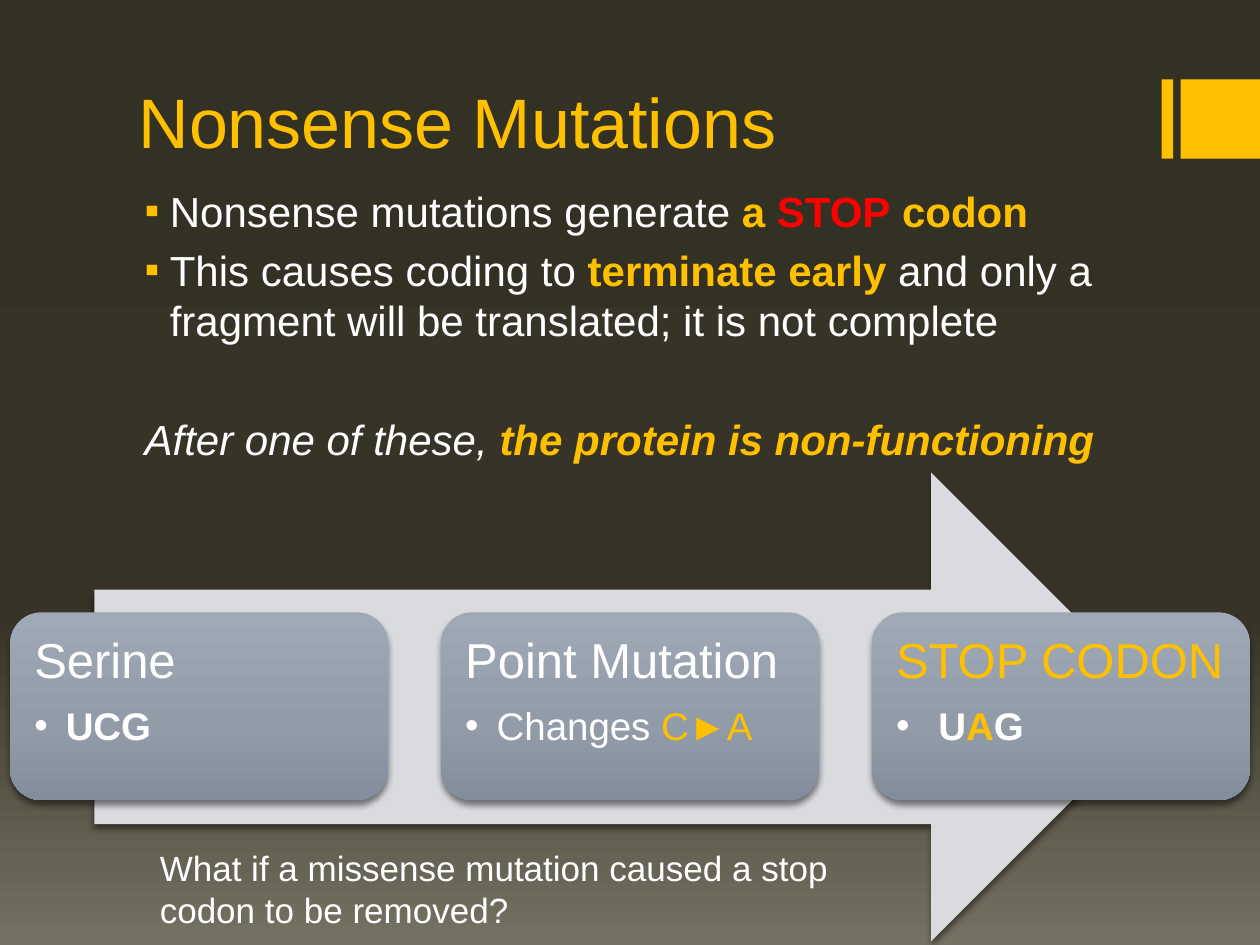
from lxml.etree import SubElement
from pptx import Presentation
from pptx.dml.color import RGBColor
from pptx.enum.shapes import MSO_SHAPE
from pptx.enum.text import MSO_ANCHOR, MSO_AUTO_SIZE, PP_ALIGN
from pptx.oxml.ns import qn
from pptx.util import Inches, Pt

C = {"gold": "FFC000", "white": "FFFFFF", "red": "FF0000", "arrow": "D9DBDE", "shadow": "000000"}
BACKGROUND = [(0, "333024"), (65, "373427"), (100, "767263")]
CARD = [(0, "9FA9B6"), (60, "929BA8"), (100, "838D9B")]


def write(p, parts, size, indent=0, hang=0, bullet=None, bullet_color="white"):
    p.alignment = PP_ALIGN.LEFT
    pPr = p._p.get_or_add_pPr()
    pPr.set("marL", str(Inches(indent)))
    pPr.set("indent", str(-Inches(hang)))
    if bullet:
        clr = SubElement(pPr, qn("a:buClr"))
        SubElement(clr, qn("a:srgbClr"), val=C[bullet_color])
        SubElement(pPr, qn("a:buFont"), typeface="Arial")
        SubElement(pPr, qn("a:buChar"), char=bullet)
    else:
        SubElement(pPr, qn("a:buNone"))
    p.text = ""
    for text, color, bold in parts:
        r = p.add_run()
        r.text = text
        r.font.name = "Arial"
        r.font.size = Pt(size)
        r.font.bold = bold
        r.font.color.rgb = RGBColor.from_string(C[color])


def shade(fill, element, stops):
    fill.gradient()
    fill.gradient_angle = 270
    gs_list = next(element.iter(qn("a:gsLst")))
    for gs in list(gs_list):
        gs_list.remove(gs)
    for pos, color in stops:
        gs = SubElement(gs_list, qn("a:gs"), pos=str(pos * 1000))
        SubElement(gs, qn("a:srgbClr"), val=color)


prs = Presentation()
prs.slide_width, prs.slide_height = Inches(10), Inches(7.5)
s = prs.slides.add_slide(prs.slide_layouts[5])
shade(s.background.fill, s._element, BACKGROUND)

for left, width in [(9.22, 0.09), (9.37, 0.63)]:
    sp = s.shapes.add_shape(MSO_SHAPE.RECTANGLE, Inches(left), Inches(0.63), Inches(width), Inches(0.63))
    sp.shadow.inherit = False
    sp.fill.solid()
    sp.fill.fore_color.rgb = RGBColor.from_string(C["gold"])
    sp.line.fill.background()

title = s.shapes.title
title.left, title.top, title.width, title.height = Inches(1), Inches(0.08), Inches(8), Inches(1.26)
title.text_frame.vertical_anchor = MSO_ANCHOR.BOTTOM
write(title.text_frame.paragraphs[0], [("Nonsense Mutations", "gold", False)], 40)

tf = s.shapes.add_textbox(Inches(1), Inches(1.42), Inches(8), Inches(3.87)).text_frame
tf.word_wrap = True
points = [
    [("Nonsense mutations generate ", "white", False), ("a ", "gold", True),
     ("STOP", "red", True), (" codon", "gold", True)],
    [("This causes coding to ", "white", False), ("terminate early ", "gold", True),
     ("and only a fragment will be translated; it is not complete", "white", False)],
]
for i, parts in enumerate(points):
    p = tf.add_paragraph() if i else tf.paragraphs[0]
    write(p, parts, 24, 0.25, 0.2, "▪", "gold")
    p.space_before = Pt(5 * i)
p = tf.add_paragraph()
write(p, [("After one of these, ", "white", False), ("the protein is non-functioning", "gold", True)], 24, 0.05)
p.space_before = Pt(39)
for r in p.runs:
    r.font.italic = True

arrow = s.shapes.add_shape(MSO_SHAPE.RIGHT_ARROW, Inches(0.75), Inches(3.75), Inches(8.5), Inches(3.72))
arrow.fill.solid()
arrow.fill.fore_color.rgb = RGBColor.from_string(C["arrow"])
process = [arrow]

cards = [
    ("Serine", "white", [("UCG", "white", True)]),
    ("Point Mutation", "white", [("Changes ", "white", False), ("C►A", "gold", False)]),
    ("STOP CODON", "gold", [(" U", "white", True), ("A", "gold", True), ("G", "white", True)]),
]
for i, (heading, color, detail) in enumerate(cards):
    sp = s.shapes.add_shape(MSO_SHAPE.ROUNDED_RECTANGLE, Inches(0.08 + 3.42 * i), Inches(4.86), Inches(3), Inches(1.49))
    shade(sp.fill, sp._element, CARD)
    process.append(sp)
    tf = sp.text_frame
    tf.word_wrap = True
    tf.vertical_anchor = MSO_ANCHOR.TOP
    tf.margin_left = tf.margin_right = tf.margin_top = tf.margin_bottom = Inches(0.12)
    write(tf.paragraphs[0], [(heading, color, False)], 28)
    write(tf.add_paragraph(), detail, 22, 0.25, 0.25, "•")
    for p, gap in zip(tf.paragraphs, (10, 3)):
        p.line_spacing = 0.9
        p.space_after = Pt(gap)

for sp in process:
    sp.line.fill.background()
    sp.shadow.inherit = False
    effects = sp._element.spPr.find(qn("a:effectLst"))
    shadow = SubElement(effects, qn("a:outerShdw"), blurRad=str(Pt(3.8)), dist=str(Pt(3)), dir="5400000", rotWithShape="0")
    clr = SubElement(shadow, qn("a:srgbClr"), val=C["shadow"])
    SubElement(clr, qn("a:alpha"), val="48000")

tf = s.shapes.add_textbox(Inches(1.17), Inches(6.67), Inches(5.83), Inches(0.77)).text_frame
tf.word_wrap = True
tf.auto_size = MSO_AUTO_SIZE.SHAPE_TO_FIT_TEXT
write(tf.paragraphs[0], [("What if a missense mutation caused a stop codon to be removed?", "white", False)], 20)

prs.save("out.pptx")
